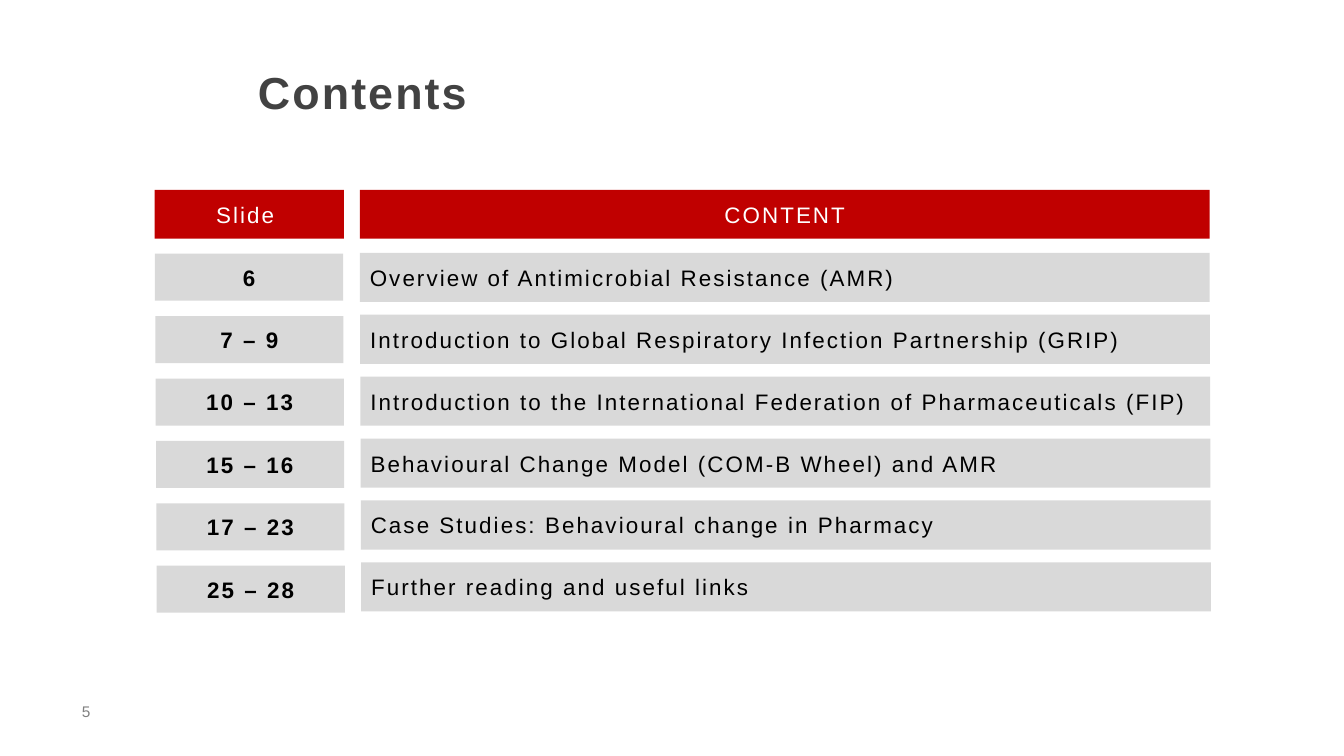
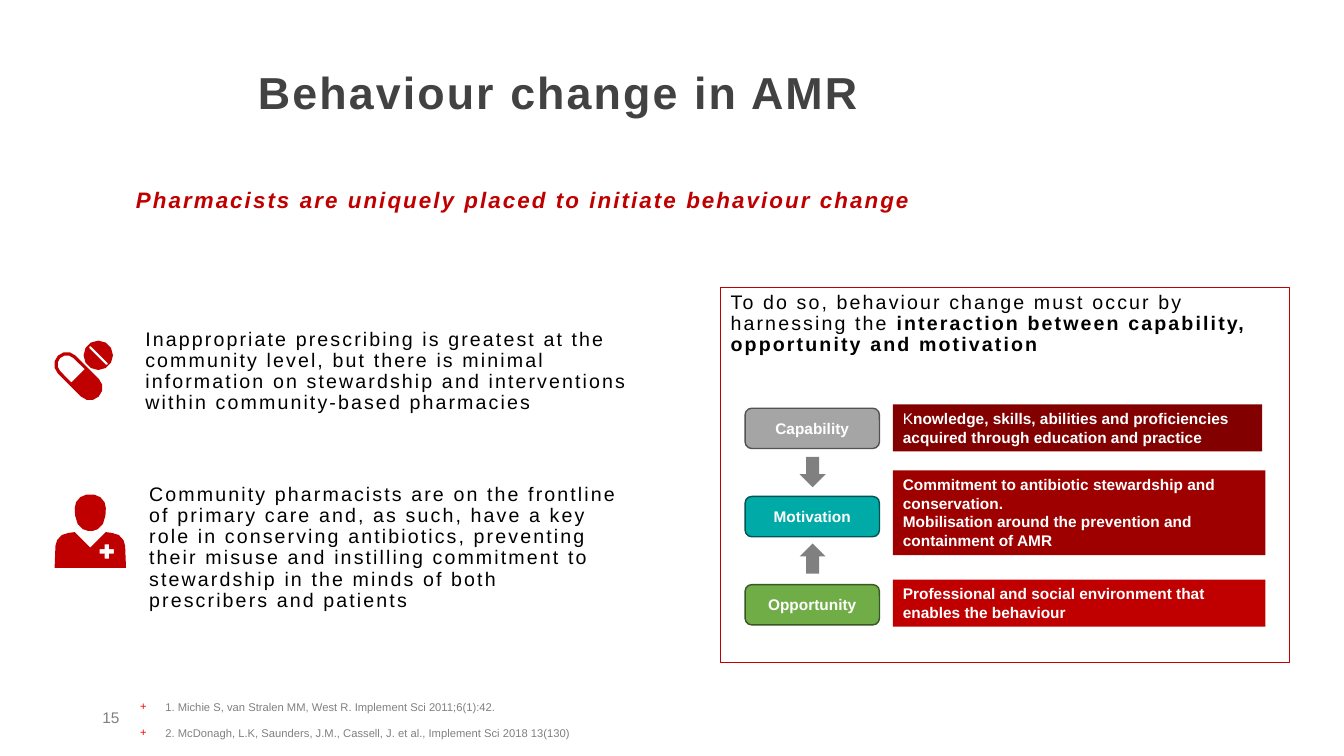
from math import cos, radians, sin
from lxml.etree import SubElement
from pptx import Presentation
from pptx.dml.color import RGBColor
from pptx.enum.shapes import MSO_SHAPE
from pptx.enum.text import MSO_ANCHOR, MSO_AUTO_SIZE, PP_ALIGN
from pptx.oxml.ns import qn
from pptx.util import Inches, Pt

WIDE, HIGH = Inches(13.333), Inches(7.5)
COLS, ROWS = 160, 90
FONT = "Arial"
RED = RGBColor(0xC0, 0x00, 0x00)
DEEP = RGBColor(0x82, 0x00, 0x00)
MID = RGBColor(0x9E, 0x00, 0x00)
HOT = RGBColor(0xFF, 0x00, 0x00)
INK = RGBColor(0x42, 0x42, 0x42)
BLACK = RGBColor(0x00, 0x00, 0x00)
WHITE = RGBColor(0xFF, 0xFF, 0xFF)
PALE = RGBColor(0xD9, 0xD9, 0xD9)
GREY = RGBColor(0x80, 0x80, 0x80)
ASH = RGBColor(0xA5, 0xA5, 0xA5)
SLATE = RGBColor(0x52, 0x52, 0x52)
TEAL = RGBColor(0x00, 0xAA, 0xA7)
PINE = RGBColor(0x00, 0x55, 0x54)
GREEN = RGBColor(0x70, 0xAD, 0x47)
MOSS = RGBColor(0x38, 0x57, 0x23)

TOPICS = [
    ("6", "Overview of Antimicrobial Resistance (AMR)"),
    ("7 – 9", "Introduction to Global Respiratory Infection Partnership (GRIP)"),
    ("10 – 13", "Introduction to the International Federation of Pharmaceuticals (FIP)"),
    ("15 – 16", "Behavioural Change Model (COM-B Wheel) and AMR"),
    ("17 – 23", "Case Studies: Behavioural change in Pharmacy"),
    ("25 – 28", "Further reading and useful links"),
]
DRIVERS = [
    ("Capability", ASH, SLATE),
    ("Motivation", TEAL, PINE),
    ("Opportunity", GREEN, MOSS),
]
PANELS = [
    (48.15, 43.95, 5.6, DEEP, False,
     ["K|nowledge, skills, abilities and proficiencies acquired through education and practice"]),
    (56, 44.35, 10.1, MID, True,
     ["Commitment to antibiotic stewardship and conservation.",
      "Mobilisation around the prevention and containment of AMR"]),
    (69, 44.35, 5.6, RED, True,
     ["Professional and social environment that enables the behaviour"]),
]
NOTES = [
    "1. Michie S, van Stralen MM, West R. Implement Sci 2011;6(1):42.",
    "2. McDonagh, L.K, Saunders, J.M., Cassell, J. et al., Implement Sci 2018 13(130)",
]


def spot(col, row):
    return round(WIDE * col / COLS), round(HIGH * row / ROWS)


def place(shape, col, row, wide, high):
    shape.left, shape.top = spot(col, row)
    shape.width, shape.height = spot(wide, high)


def mark(para, sign):
    props = para._p.get_or_add_pPr()
    inset = Inches(0.25) if sign else 0
    props.set("marL", str(inset))
    props.set("indent", str(-inset))
    if sign:
        tint = SubElement(props, qn("a:buClr"))
        SubElement(tint, qn("a:srgbClr")).set("val", str(HOT))
        SubElement(props, qn("a:buFont")).set("typeface", FONT)
        SubElement(props, qn("a:buChar")).set("char", sign)
    else:
        SubElement(props, qn("a:buNone"))


def write(shape, lines, size, color, bold=False, slant=False, wide=1.5, lead=1,
          align=PP_ALIGN.LEFT, anchor=MSO_ANCHOR.TOP, sign=None):
    frame = shape.text_frame
    frame.word_wrap = True
    frame.auto_size = MSO_AUTO_SIZE.NONE
    frame.vertical_anchor = anchor
    for num, line in enumerate(lines):
        para = frame.add_paragraph() if num else frame.paragraphs[0]
        head, _, tail = line.partition("|")
        para.text = head
        if tail:
            para.add_run().text = tail
        para.alignment = align
        para.line_spacing = lead
        para.space_before = Pt(10 if num and sign else 0)
        mark(para, sign)
        for part, run in enumerate(para.runs):
            font = run.font
            font.name, font.size = FONT, Pt(size)
            font.bold, font.italic = bold or part > 0, slant
            font.color.rgb = color
            run._r.get_or_add_rPr().set("spc", str(round(wide * 100)))


def paint(shape, fill=None, edge=None, width=1):
    shape.shadow.inherit = False
    if fill is None:
        shape.fill.background()
    else:
        shape.fill.solid()
        shape.fill.fore_color.rgb = fill
    if edge is None:
        shape.line.fill.background()
    else:
        shape.line.color.rgb = edge
        shape.line.width = Pt(width)


def block(slide, kind, area, fill=None, edge=None, width=1):
    shape = slide.shapes.add_shape(kind, *spot(*area[:2]), *spot(*area[2:]))
    paint(shape, fill, edge, width)
    return shape


def label(slide, area, lines, size, color, **style):
    box = slide.shapes.add_textbox(*spot(*area[:2]), *spot(*area[2:]))
    write(box, lines, size, color, **style)


def start(deck, layout, title, page, area):
    slide = deck.slides.add_slide(deck.slide_layouts[layout])
    head = slide.shapes.title
    place(head, 29.5, 7.8, 119.5, 11.8)
    head.text_frame.margin_bottom = 0
    write(head, [title], 32, INK, bold=True, lead=0.9)
    label(slide, area, [page], 11, GREY, wide=0, anchor=MSO_ANCHOR.MIDDLE)
    return slide


def arc(col, row, size, first, last, step=30):
    turns = [radians(turn) for turn in range(first, last + 1, step)]
    return [(col + size * cos(turn), row + size * sin(turn)) for turn in turns]


def pill(one, two, size, step=30):
    return arc(*one, size, 135, 315, step) + arc(*two, size, -45, 135, step)


def cross(col, row, arm, half):
    points = []
    for x, y in ((1, 0), (0, 1), (-1, 0), (0, -1)):
        for a, b in ((arm, -half), (arm, half), (half, half)):
            points.append((col + a * x - b * y, row + a * y + b * x))
    return points


def twin(mid, half):
    return ([(mid + x, y) for x, y in half]
            + [(mid - x, y) for x, y in reversed(half)])


def icon(slide, *rings):
    form = None
    for ring in rings:
        first, *rest = [spot(*point) for point in ring]
        if form is None:
            form = slide.shapes.build_freeform(*first)
        else:
            form.move_to(*first)
        form.add_line_segments(rest, close=True)
    paint(form.convert_to_shape(), RED)


def drugs(slide):
    top, end = (7.95, 43.4), (10.7, 46.15)
    icon(slide, pill(top, end, 1.5),
         arc(*top, 1.1, 135, 315) + [(10.1, 43.95), (8.5, 45.55)])
    icon(slide, arc(11.7, 42.3, 1.75, 0, 330),
         pill((10.75, 41.35), (12.7, 43.3), 0.15, 90))


def medic(slide):
    mid = 10.75
    coat = [(4.25, 67.6), (4.15, 65), (3.95, 64.3), (3.4, 63.7),
            (2.6, 63.45), (1.85, 63.35), (0, 65.2)]
    head = [(0.5, 58.9), (1.2, 59.2), (1.7, 59.8), (1.85, 60.5),
            (1.8, 61.4), (1.5, 62.4), (0.9, 63), (0.3, 63.2)]
    icon(slide, twin(mid, coat), twin(mid, head), cross(12.72, 65.65, 0.85, 0.27))


def topics(slide):
    for col, wide, text in ((18.4, 22.55, "Slide "), (42.85, 101.15, "CONTENT")):
        cell = block(slide, MSO_SHAPE.RECTANGLE, (col, 22.6, wide, 5.8), RED)
        write(cell, [text], 16, WHITE, align=PP_ALIGN.CENTER, anchor=MSO_ANCHOR.MIDDLE)
    for num, (page, topic) in enumerate(TOPICS):
        cells = [
            ((18.45 + 0.04 * num, 30.2 + 7.43 * num, 22.4, 5.6),
             page, True, PP_ALIGN.CENTER),
            ((42.85 + 0.03 * num, 30.1 + 7.37 * num, 101.15, 5.85),
             topic, False, PP_ALIGN.LEFT),
        ]
        for area, text, bold, align in cells:
            cell = block(slide, MSO_SHAPE.RECTANGLE, area, PALE)
            write(cell, [text], 16, BLACK, bold=bold, align=align,
                  anchor=MSO_ANCHOR.MIDDLE)


def model(slide):
    frame = block(slide, MSO_SHAPE.RECTANGLE, (85.8, 34.2, 67.75, 44.7), None, RED, 0.75)
    write(frame, ["To do so, behaviour change must occur by harnessing the "
                  "|interaction between capability, opportunity and motivation"],
          14, BLACK, lead=0.9)
    for row, wide, high, fill, bold, lines in PANELS:
        panel = block(slide, MSO_SHAPE.RECTANGLE, (106.3, row, wide, high), fill)
        write(panel, lines, 11, WHITE, bold=bold, wide=0)
    for num, (name, fill, edge) in enumerate(DRIVERS):
        area = (88.7, 48.6 + 10.5 * num, 16, 4.8)
        chip = block(slide, MSO_SHAPE.ROUNDED_RECTANGLE, area, fill, edge)
        write(chip, [name], 11, WHITE, bold=True, wide=0,
              align=PP_ALIGN.CENTER, anchor=MSO_ANCHOR.MIDDLE)
    for num, kind in enumerate((MSO_SHAPE.DOWN_ARROW, MSO_SHAPE.UP_ARROW)):
        block(slide, kind, (95.2, 54.4 + 10.3 * num, 3.1, 3.6), GREY)


def claims(slide):
    label(slide, (15, 21.92, 108.8, 4.1),
          ["Pharmacists are uniquely placed to initiate behaviour change"],
          16, RED, bold=True, slant=True, lead=0.9)
    label(slide, (16.12, 38.62, 61.5, 16),
          ["Inappropriate prescribing is greatest at the community level, but there is "
           "minimal information on stewardship and interventions within "
           "community-based pharmacies"], 14, BLACK, lead=0.9)
    body = slide.placeholders[1]
    place(body, 16.56, 57.07, 59, 18.1)
    write(body, ["Community pharmacists are on the frontline of primary care and, as such, "
                 "have a key role in conserving antibiotics, preventing their misuse and "
                 "instilling commitment to stewardship in the minds of both prescribers "
                 "and patients"], 14, BLACK, lead=0.9)
    label(slide, (15.5, 84.1, 94.8, 3.4), NOTES, 8, GREY, wide=0, lead=0.9,
          anchor=MSO_ANCHOR.MIDDLE, sign="+")


def main():
    deck = Presentation()
    deck.slide_width, deck.slide_height = WIDE, HIGH
    topics(start(deck, 5, "Contents", "5", (8.55, 82.3, 9.7, 4.8)))
    slide = start(deck, 1, "Behaviour change in AMR", "15", (11, 83, 9.7, 4.8))
    claims(slide)
    drugs(slide)
    medic(slide)
    model(slide)
    deck.save("out.pptx")


if __name__ == "__main__":
    main()
